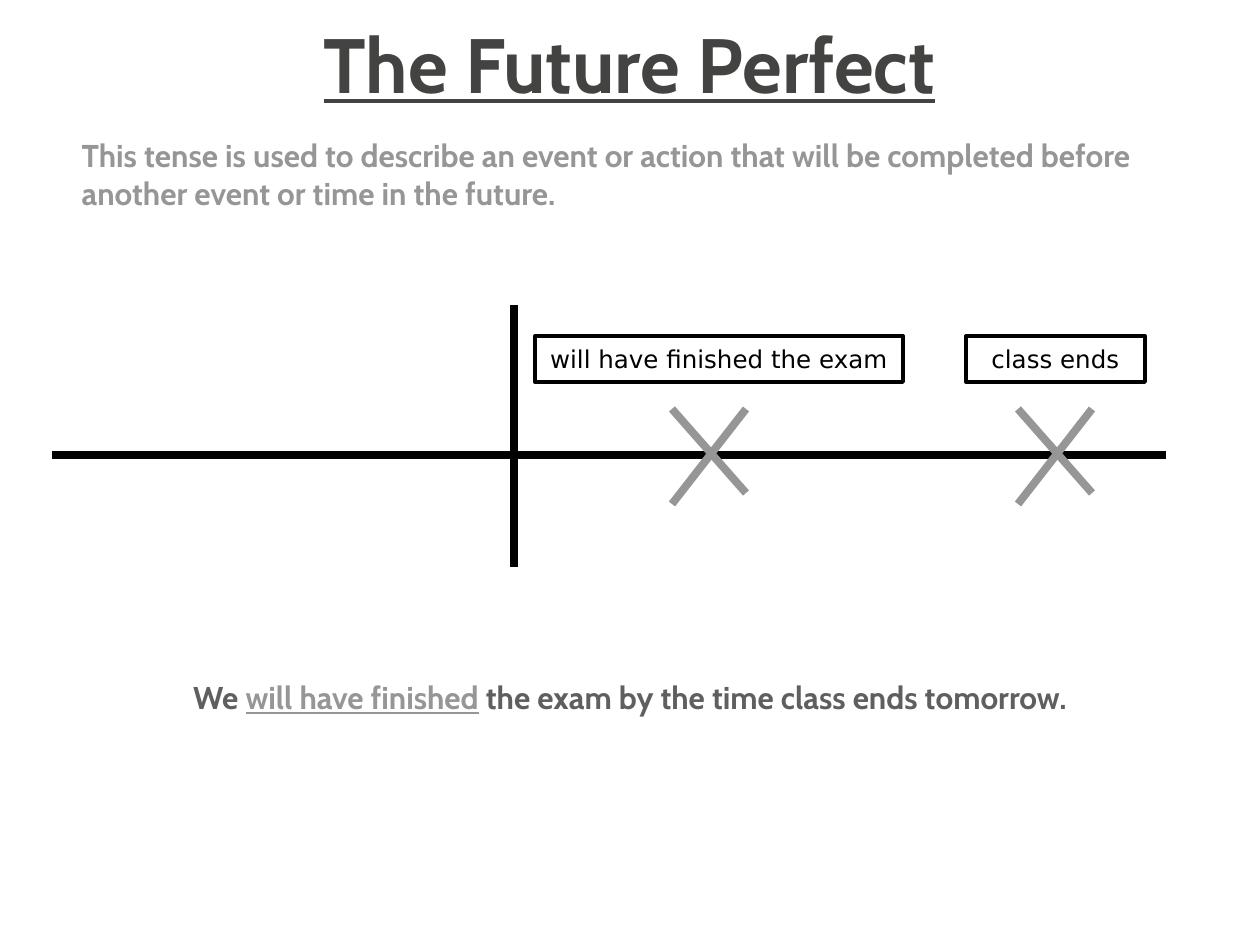
from dataclasses import dataclass

from lxml.etree import SubElement
from pptx import Presentation
from pptx.dml.color import RGBColor
from pptx.enum.shapes import MSO_CONNECTOR, MSO_SHAPE
from pptx.enum.text import MSO_ANCHOR, MSO_AUTO_SIZE, PP_ALIGN
from pptx.oxml.ns import qn
from pptx.util import Pt

PX = 914400 / 126


@dataclass(frozen=True)
class Theme:
    heading_font: str = "Cabin"
    label_font: str = "DejaVu Sans"
    title: str = "434342"
    body: str = "5F5F5F"
    accent: str = "969696"
    ink: str = "000000"
    title_size: int = 44
    body_size: int = 18
    label_size: int = 14
    stroke: float = 4.5
    border: float = 2.25


THEME = Theme()

TITLE = [("The Future Perfect", THEME.title, True)]
DEFINITION = [(
    "This tense is used to describe an event or action that will be completed "
    "before another event or time in the future.", THEME.accent, False)]
EXAMPLE = [
    ("We ", THEME.body, False),
    ("will have finished", THEME.accent, True),
    (" the exam by the time class ends tomorrow.", THEME.body, False),
]
AXES = [(52, 455, 1166, 455), (514, 305, 514, 567)]
EVENTS = [
    ("class ends", 966, 179, 1018),
    ("will have finished the exam", 535, 368, 672),
]
MARK_TOP, MARK_WIDTH, MARK_DROPS = 409, 74, (84, 95)
LABEL_TOP, LABEL_HEIGHT = 336, 46


def px(*lengths):
    return [round(length * PX) for length in lengths]


def color(code):
    return RGBColor.from_string(code)


def write(paragraph, runs, font, size, bold):
    for words, ink, underlined in runs:
        run = paragraph.add_run()
        run.text = words
        run.font.name = font
        run.font.size = Pt(size)
        run.font.bold = bold
        run.font.underline = underlined
        run.font.color.rgb = color(ink)


def fill_placeholder(holder, box, runs, size, align, anchor, margin=0):
    holder.left, holder.top, holder.width, holder.height = px(*box)
    frame = holder.text_frame
    frame.auto_size = MSO_AUTO_SIZE.NONE
    frame.word_wrap = True
    frame.vertical_anchor = anchor
    paragraph = frame.paragraphs[0]
    properties = paragraph._p.get_or_add_pPr()
    properties.set("marL", str(px(margin)[0]))
    properties.set("indent", "0")
    SubElement(properties, qn("a:buNone"))
    paragraph.alignment = align
    paragraph.space_before = Pt(0)
    write(paragraph, runs, THEME.heading_font, size, True)


def add_lines(slide, segments, ink):
    group = slide.shapes.add_group_shape()
    for segment in segments:
        stroke = group.shapes.add_connector(MSO_CONNECTOR.STRAIGHT, *px(*segment))
        stroke.line.color.rgb = color(ink)
        stroke.line.width = Pt(THEME.stroke)
        SubElement(stroke._element.spPr, qn("a:effectLst"))


def add_label(slide, words, left, width):
    label = slide.shapes.add_shape(
        MSO_SHAPE.RECTANGLE, *px(left, LABEL_TOP, width, LABEL_HEIGHT))
    label.shadow.inherit = False
    label.fill.background()
    label.line.color.rgb = color(THEME.ink)
    label.line.width = Pt(THEME.border)
    label.text_frame.word_wrap = False
    paragraph = label.text_frame.paragraphs[0]
    paragraph.alignment = PP_ALIGN.CENTER
    write(paragraph, [(words, THEME.ink, False)], THEME.label_font,
          THEME.label_size, False)


def main():
    deck = Presentation()
    deck.slide_width, deck.slide_height = px(1260, 945)
    slide = deck.slides.add_slide(deck.slide_layouts.get_by_name("Two Content"))
    title, definition, example = list(slide.placeholders)[:3]

    fill_placeholder(title, (10, 10, 1239, 105), TITLE, THEME.title_size,
                     PP_ALIGN.CENTER, MSO_ANCHOR.BOTTOM)
    fill_placeholder(definition, (21, 130, 1197, 217), DEFINITION,
                     THEME.body_size, PP_ALIGN.LEFT, MSO_ANCHOR.TOP, 48)
    fill_placeholder(example, (0, 672, 1260, 126), EXAMPLE, THEME.body_size,
                     PP_ALIGN.CENTER, MSO_ANCHOR.TOP)

    add_lines(slide, AXES, THEME.ink)
    short, long = (MARK_TOP + drop for drop in MARK_DROPS)
    for words, label_left, label_width, left in EVENTS:
        right = left + MARK_WIDTH
        add_lines(slide, [(left, MARK_TOP, right, short),
                          (right, MARK_TOP, left, long)], THEME.accent)
        add_label(slide, words, label_left, label_width)

    deck.save("out.pptx")


if __name__ == "__main__":
    main()
